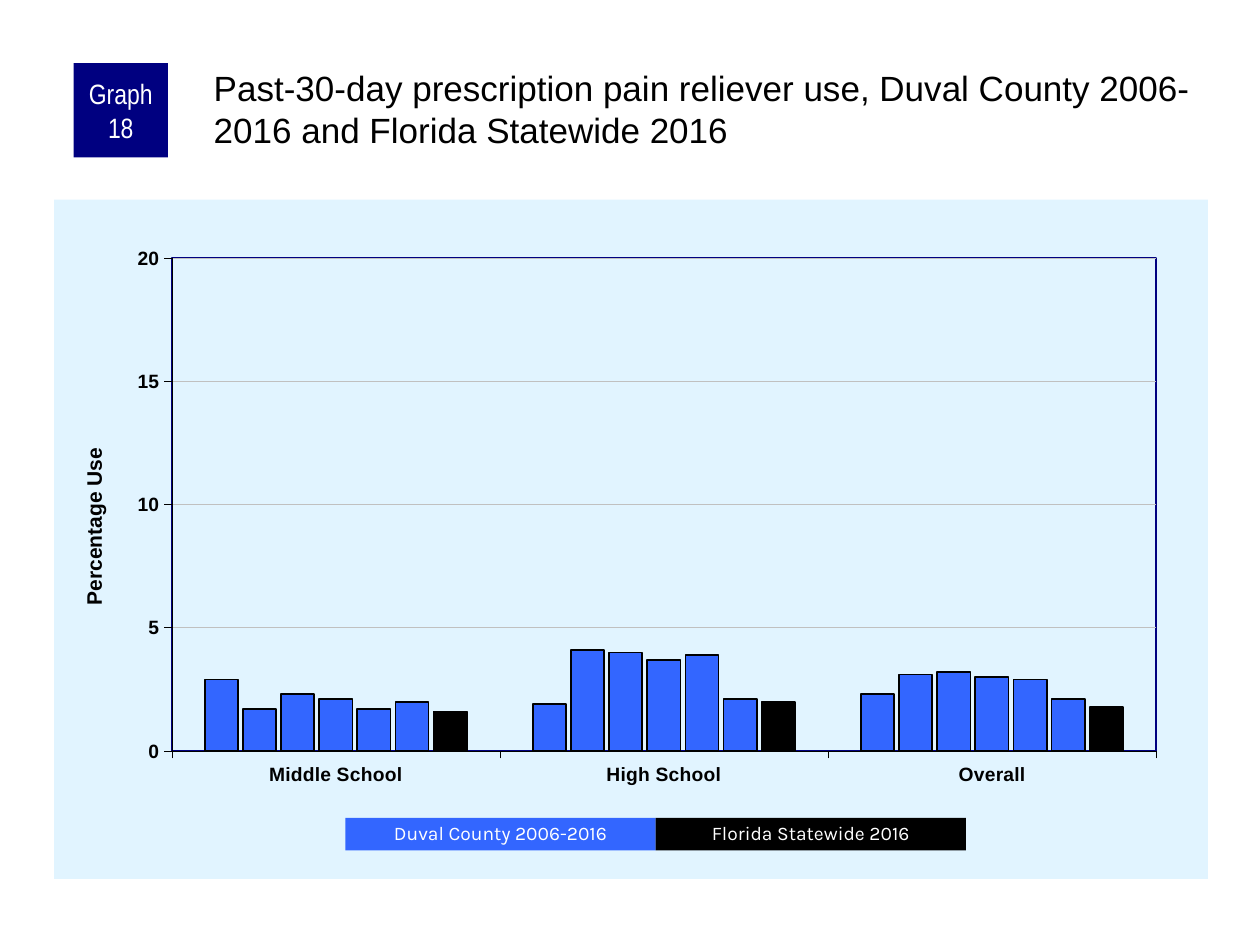
from collections import namedtuple
from dataclasses import dataclass

from pptx import Presentation
from pptx import util as u
from pptx.chart import data as chart_data
from pptx.dml.color import RGBColor
from pptx.enum import chart as ch
from pptx.enum import shapes, text
from pptx.oxml import parse_xml
from pptx.oxml.ns import nsdecls

# Grid: 120 columns by 90 rows, each cell a twelfth of an inch
COLUMNS, ROWS = 120, 90
CELL = u.Inches(10) // COLUMNS
Box = namedtuple("Box", "col row cols rows")


@dataclass(frozen=True)
class Theme:
    navy: str = "000080"
    county: str = "3366FF"
    state: str = "000000"
    panel: str = "E1F4FF"
    grid: str = "C0C0C0"
    ink: str = "000000"
    white: str = "FFFFFF"
    body_font: str = "Arial"
    badge_font: str = "Arial Narrow"
    key_font: str = "Karla"
    title_size: float = 20
    badge_size: float = 16
    axis_title_size: float = 12
    label_size: float = 11
    chart_size: float = 8


THEME = Theme()
LEVELS = ["Middle School", "High School", "Overall"]
COUNTY_USE = [(2.9, 1.9, 2.3), (1.7, 4.1, 3.1), (2.3, 4, 3.2),
              (2.1, 3.7, 3), (1.7, 3.9, 2.9), (2, 2.1, 2.1)]
STATE_USE = (1.6, 2, 1.8)


def place(box):
    return [round(cells * CELL) for cells in box]


def rgb(color):
    return RGBColor.from_string(color)


def set_font(font, name, size, color, bold=False):
    font.name, font.size, font.bold = name, u.Pt(size), bold
    font.color.rgb = rgb(color)


def set_line(line, color, width):
    line.color.rgb = rgb(color)
    line.width = u.Pt(width)


def add_label(slide, box, fill, wording, font_name, size):
    """A filled rectangle with centred white text."""
    label = slide.shapes.add_shape(shapes.MSO_SHAPE.RECTANGLE, *place(box))
    label.shadow.inherit = False
    label.fill.solid()
    label.fill.fore_color.rgb = rgb(fill)
    label.line.fill.background()
    frame = label.text_frame
    frame.word_wrap = True
    frame.vertical_anchor = text.MSO_ANCHOR.MIDDLE
    frame.margin_left = frame.margin_right = u.Inches(0.05)
    frame.margin_top = frame.margin_bottom = 0
    line = frame.paragraphs[0]
    line.text = wording
    line.alignment = text.PP_ALIGN.CENTER
    set_font(line.font, font_name, size, THEME.white)
    return line


def add_header(slide, box):
    # Graph number
    add_label(slide, Box(box.col, box.row, 9, 9), THEME.navy, "Graph 18",
              THEME.badge_font, THEME.badge_size)
    # Heading
    heading = slide.shapes.add_textbox(
        *place(Box(box.col + 13, box.row, box.cols - 13, box.rows)))
    frame = heading.text_frame
    frame.word_wrap = True
    frame.margin_left = frame.margin_top = u.Inches(0.03)
    frame.margin_right = frame.margin_bottom = 0
    line = frame.paragraphs[0]
    line.text = ("Past-30-day prescription pain reliever use, "
                 "Duval County 2006-2016 and Florida Statewide 2016")
    set_font(line.font, THEME.body_font, THEME.title_size, THEME.ink)


def manual_layout(x, y, w=None, h=None):
    target = '<c:layoutTarget val="inner"/>' if w else ""
    size = f'<c:w val="{w}"/><c:h val="{h}"/>' if w else ""
    return parse_xml(
        f'<c:layout {nsdecls("c")}><c:manualLayout>{target}'
        '<c:xMode val="edge"/><c:yMode val="edge"/>'
        f'<c:x val="{x}"/><c:y val="{y}"/>{size}</c:manualLayout></c:layout>')


def replace_layout(parent, layout, position):
    for old in parent.xpath("./c:layout"):
        parent.remove(old)
    parent.insert(position, layout)


def area_format(fill, line):
    return parse_xml(f'<c:spPr {nsdecls("c", "a")}>{fill}{line}</c:spPr>')


def solid(color):
    return f'<a:solidFill><a:srgbClr val="{color}"/></a:solidFill>'


def add_use_chart(slide, box):
    use = chart_data.CategoryChartData()
    use.categories = LEVELS
    for number, values in enumerate(COUNTY_USE + [STATE_USE], 1):
        use.add_series(f"Series {number}", values)
    chart = slide.shapes.add_chart(
        ch.XL_CHART_TYPE.COLUMN_CLUSTERED, *place(box), use).chart
    chart.has_legend = chart.has_title = False
    set_font(chart.font, THEME.body_font, THEME.chart_size, THEME.ink)

    # Bars
    bars = chart.plots[0]
    bars.gap_width, bars.overlap, bars.vary_by_categories = 200, -15, False
    colors = [THEME.county] * len(COUNTY_USE) + [THEME.state]
    for series, color in zip(bars.series, colors):
        series.format.fill.solid()
        series.format.fill.fore_color.rgb = rgb(color)
        set_line(series.format.line, THEME.ink, 1)

    # Axes
    levels, percent = chart.category_axis, chart.value_axis
    for axis in (levels, percent):
        axis.major_tick_mark = ch.XL_TICK_MARK.OUTSIDE
        axis.minor_tick_mark = ch.XL_TICK_MARK.NONE
        set_font(axis.tick_labels.font, THEME.body_font, THEME.label_size,
                 THEME.ink, True)
        set_line(axis.format.line, THEME.ink, 0.25)
    percent.minimum_scale, percent.maximum_scale, percent.major_unit = 0, 20, 5
    percent.tick_labels.number_format = "0"
    percent.tick_labels.number_format_is_linked = False
    percent.has_major_gridlines = True
    set_line(percent.major_gridlines.format.line, THEME.grid, 0.25)
    caption = percent.axis_title.text_frame.paragraphs[0]
    caption.text = "Percentage Use"
    set_font(caption.font, THEME.body_font, THEME.axis_title_size,
             THEME.ink, True)
    replace_layout(percent.axis_title._element, manual_layout(0.02, 0.36), 1)

    # Plot frame and chart background
    space = chart._chartSpace
    plot_area = space.chart.plotArea
    replace_layout(plot_area, manual_layout(0.102, 0.086, 0.853, 0.726), 0)
    plot_area.append(area_format(
        "<a:noFill/>", f'<a:ln w="{u.Pt(1)}">{solid(THEME.navy)}</a:ln>'))
    space.chart.addnext(area_format(
        solid(THEME.panel), "<a:ln><a:noFill/></a:ln>"))


def add_key(slide, box):
    entries = [("Duval County 2006-2016", THEME.county),
               ("Florida Statewide 2016", THEME.state)]
    width = box.cols / len(entries)
    for index, (wording, color) in enumerate(entries):
        entry = Box(box.col + index * width, box.row, width, box.rows)
        line = add_label(slide, entry, color, wording,
                         THEME.key_font, THEME.label_size)
        line.line_spacing = 0.9


def main():
    deck = Presentation()
    deck.slide_width, deck.slide_height = COLUMNS * CELL, ROWS * CELL
    slide = deck.slides.add_slide(deck.slide_layouts[6])
    add_use_chart(slide, Box(5.15, 19, 109.9, 64.7))
    add_header(slide, Box(7, 6, 108, 10))
    add_key(slide, Box(32.9, 77.9, 59.1, 3.1))
    deck.save("out.pptx")


if __name__ == "__main__":
    main()
